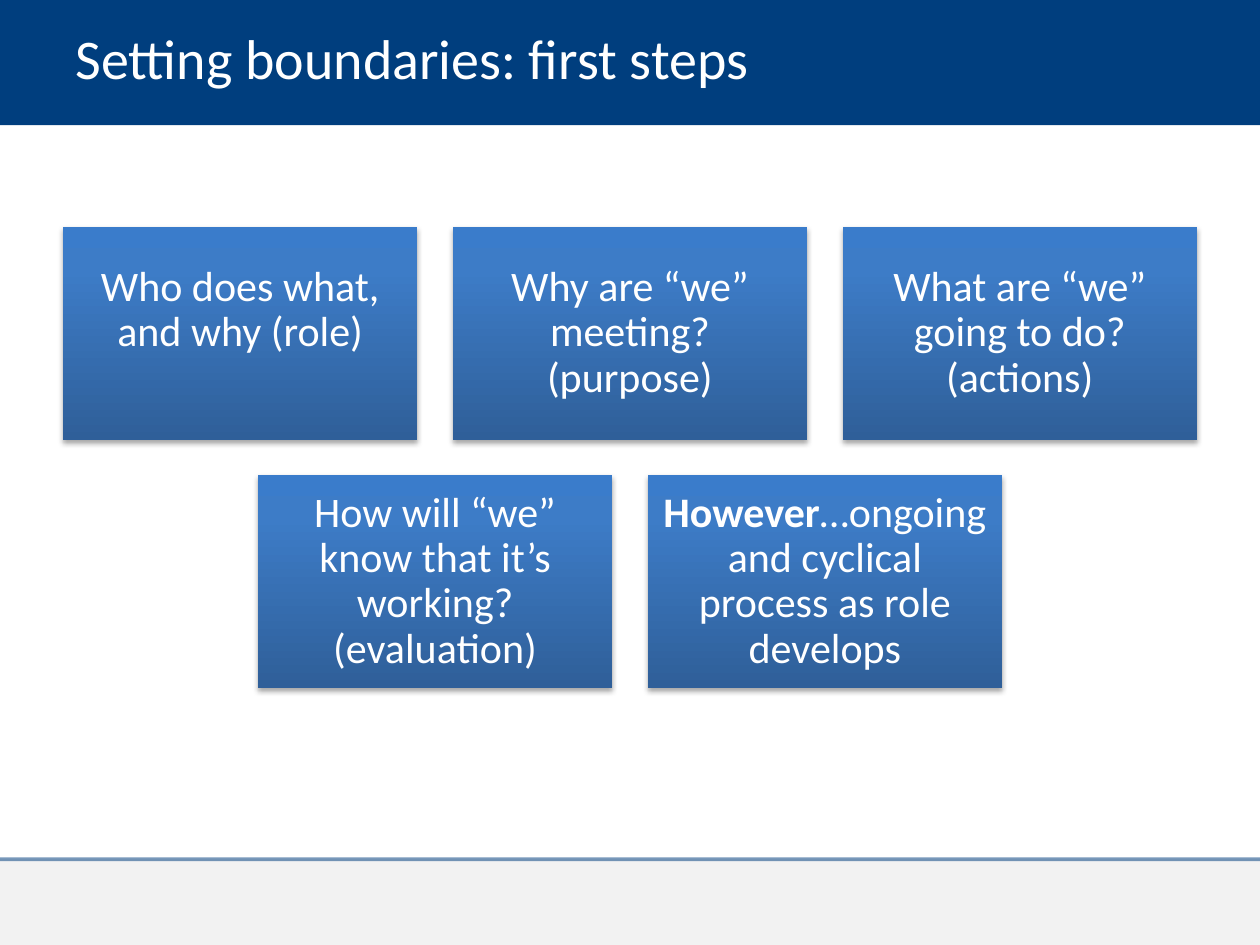
from lxml.etree import SubElement
from pptx import Presentation
from pptx.dml.color import RGBColor
from pptx.enum.shapes import MSO_CONNECTOR as CONNECTOR, MSO_SHAPE as SHAPE
from pptx.enum.text import MSO_ANCHOR as ANCHOR, MSO_AUTO_SIZE as AUTO_SIZE, PP_ALIGN as ALIGN
from pptx.oxml import parse_xml
from pptx.oxml.ns import nsdecls, qn
from pptx.util import Pt

TITLE = "Setting boundaries: first steps"
ROWS = [
    [
        ("", "Who does what, and why (role)"),
        ("", "Why are “we” meeting? (purpose)"),
        ("", "What are “we” going to do? (actions)"),
    ],
    [
        ("", "How will “we” know that it’s working? (evaluation)"),
        ("However", "…ongoing and cyclical process as role develops"),
    ],
]
RAISED_CARD = ROWS[0][0]
NAVY, GREY, WHITE = "003E7E", "808080", "FFFFFF"
CARD_GRADIENT = [(0, "2F5F99"), (80, "3D7CC7"), (100, "3A7CCB")]

SLIDE_W, SLIDE_H = 720, 540
HEADER_H, FOOTER_TOP = 71.5, 491
CARD_W, CARD_H, GAP, CARDS_TOP = 202.5, 121.5, 20.25, 129.75
INSET, LINE_H = 7.2, 26


def rgb(value):
    return RGBColor.from_string(value)


def set_alpha(element, percent):
    color = next(element.iter(qn("a:srgbClr")))
    SubElement(color, qn("a:alpha")).set("val", str(percent * 1000))


def add_band(slide, top, height, color):
    band = slide.shapes.add_shape(SHAPE.RECTANGLE, 0, Pt(top), Pt(SLIDE_W), Pt(height))
    band.shadow.inherit = False
    band.fill.solid()
    band.fill.fore_color.rgb = rgb(color)
    band.line.fill.background()
    return band


def format_text(paragraph, size):
    paragraph.line_spacing = 0.9
    for run in paragraph.runs:
        run.font.name = "Calibri"
        run.font.size = Pt(size)
        run.font.color.rgb = rgb(WHITE)


def style_card(card):
    card.line.fill.background()
    stops = "".join(
        f'<a:gs pos="{pos * 1000}"><a:srgbClr val="{color}"/></a:gs>'
        for pos, color in CARD_GRADIENT
    )
    properties = card._element.spPr
    properties.find(qn("a:ln")).addprevious(parse_xml(
        f'<a:gradFill {nsdecls("a")} rotWithShape="1"><a:gsLst>{stops}</a:gsLst>'
        '<a:lin ang="16200000" scaled="0"/></a:gradFill>'
    ))
    properties.append(parse_xml(
        f'<a:effectLst {nsdecls("a")}><a:outerShdw blurRad="{Pt(3.1)}" dist="{Pt(1.8)}" '
        'dir="5400000" rotWithShape="0"><a:srgbClr val="000000"><a:alpha val="35000"/>'
        '</a:srgbClr></a:outerShdw></a:effectLst>'
    ))


def add_card(slide, left, top, content):
    card = slide.shapes.add_shape(SHAPE.RECTANGLE, Pt(left), Pt(top), Pt(CARD_W), Pt(CARD_H))
    style_card(card)
    frame = card.text_frame
    frame.word_wrap = True
    frame.vertical_anchor = ANCHOR.MIDDLE
    frame.margin_left = frame.margin_right = frame.margin_top = Pt(INSET)
    frame.margin_bottom = Pt(INSET + (LINE_H if content is RAISED_CARD else 0))
    paragraph = frame.paragraphs[0]
    paragraph.alignment = ALIGN.CENTER
    for words, bold in zip(content, (True, False)):
        if words:
            run = paragraph.add_run()
            run.text = words
            run.font.bold = bold
    format_text(paragraph, 24)


def main():
    prs = Presentation()
    prs.slide_width, prs.slide_height = Pt(SLIDE_W), Pt(SLIDE_H)
    slide = prs.slides.add_slide(prs.slide_layouts[5])

    title = slide.shapes.title
    header = add_band(slide, 0, HEADER_H, NAVY)
    title._element.addprevious(header._element)
    footer = add_band(slide, FOOTER_TOP, SLIDE_H - FOOTER_TOP, GREY)
    set_alpha(footer._element.spPr, 10)

    rule = slide.shapes.add_connector(
        CONNECTOR.STRAIGHT, 0, Pt(FOOTER_TOP), Pt(SLIDE_W), Pt(FOOTER_TOP))
    rule.line.color.rgb = rgb(NAVY)
    rule.line.width = Pt(2.25)
    set_alpha(rule._element.spPr, 52)
    SubElement(rule._element.spPr, qn("a:effectLst"))

    title.left, title.top, title.width, title.height = Pt(36), Pt(10), Pt(500), Pt(50)
    frame = title.text_frame
    frame.text = TITLE
    frame.word_wrap = True
    frame.auto_size = AUTO_SIZE.NONE
    frame.vertical_anchor = ANCHOR.MIDDLE
    frame.paragraphs[0].alignment = ALIGN.LEFT
    format_text(frame.paragraphs[0], 32)

    for row, cards in enumerate(ROWS):
        row_w = len(cards) * (CARD_W + GAP) - GAP
        for column, content in enumerate(cards):
            left = (SLIDE_W - row_w) / 2 + column * (CARD_W + GAP)
            add_card(slide, left, CARDS_TOP + row * (CARD_H + GAP), content)

    prs.save("out.pptx")


if __name__ == "__main__":
    main()
